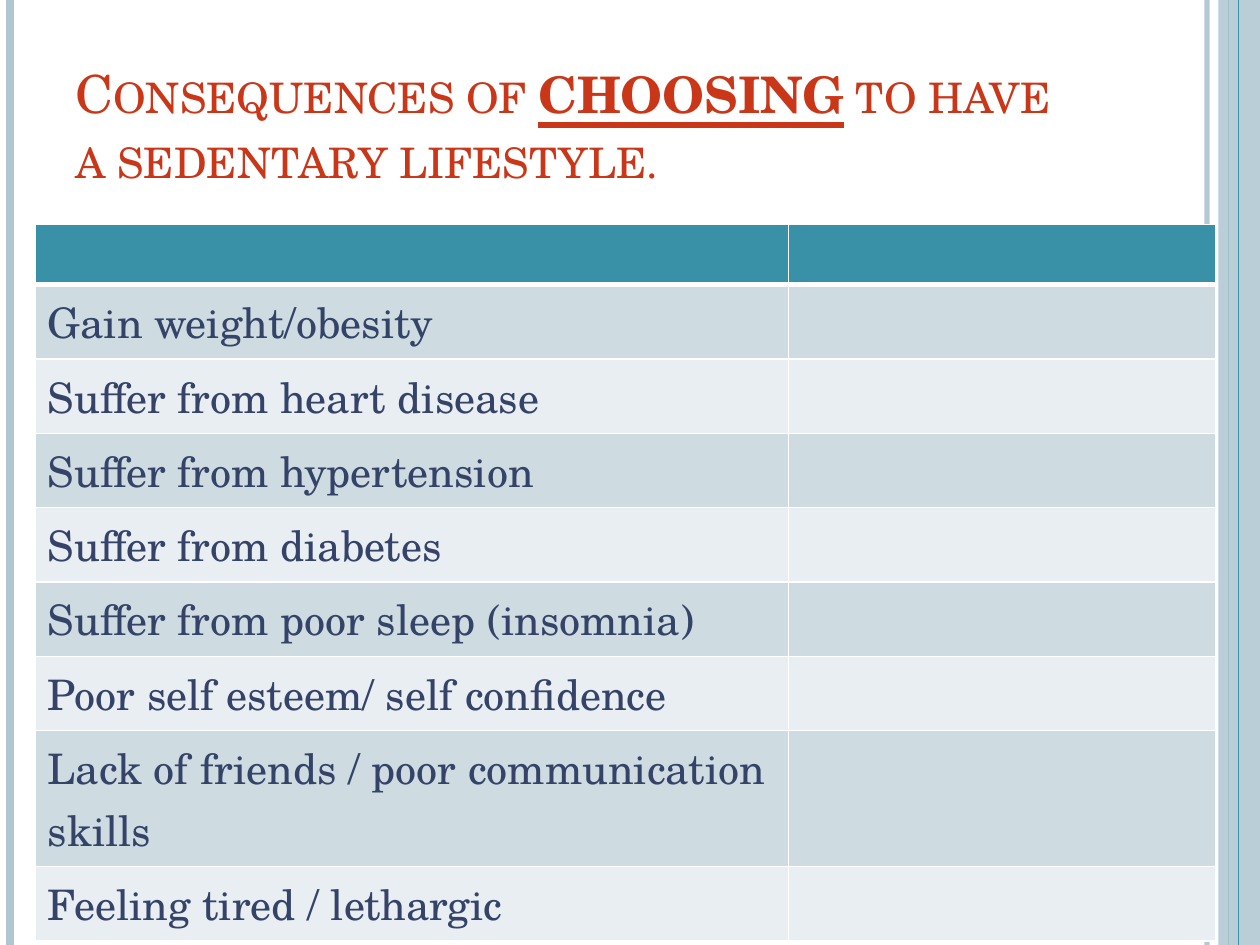
from lxml.etree import SubElement
from pptx import Presentation
from pptx.dml.color import RGBColor
from pptx.enum.shapes import MSO_CONNECTOR, MSO_SHAPE
from pptx.enum.text import MSO_ANCHOR
from pptx.oxml.ns import qn
from pptx.util import Inches, Pt

FONT = "TeX Gyre Schola"
TEAL, PALE_BLUE, WHITE = "3891A7", "AFC7D0", "FFFFFF"
TITLE_RED, TEXT_NAVY = "CA3618", "354369"
BANDS = ("CEDCE1", "E8EEF1")

CONSEQUENCES = [
    "Gain weight/obesity",
    "Suffer from heart disease",
    "Suffer from hypertension",
    "Suffer from diabetes",
    "Suffer from poor sleep (insomnia)",
    "Poor self esteem/ self confidence",
    "Lack of friends / poor communication skills",
    "Feeling tired / lethargic",
]
TWO_LINE_ROW = 7
HEADER_HEIGHT, ROW_HEIGHT, TWO_LINE_HEIGHT = 0.48, 0.59, 1.08
COLUMN_WIDTHS = (5.98, 3.39)


def color(hex_string):
    return RGBColor.from_string(hex_string)


def set_alpha(fill_parent, percent):
    rgb = fill_parent.find(".//" + qn("a:srgbClr"))
    SubElement(rgb, qn("a:alpha"), val=str(percent * 1000))


def add_rule(slide, x, hex_string, width, alpha=100):
    """Full-height vertical line."""
    rule = slide.shapes.add_connector(
        MSO_CONNECTOR.STRAIGHT, Inches(x), 0, Inches(x), Inches(7.5))
    rule.line.color.rgb = color(hex_string)
    rule.line.width = Pt(width)
    properties = rule._element.spPr
    if alpha < 100:
        set_alpha(properties, alpha)
    SubElement(properties, qn("a:effectLst"))


def add_side_band(slide):
    band = slide.shapes.add_shape(
        MSO_SHAPE.RECTANGLE, Inches(9.67), 0, Inches(0.33), Inches(7.5))
    band.shadow.inherit = False
    band.fill.solid()
    band.fill.fore_color.rgb = color(PALE_BLUE)
    set_alpha(band._element.spPr, 87)
    band.line.fill.background()


def add_title(slide):
    title = slide.shapes.add_textbox(
        Inches(0.5), Inches(0.3), Inches(8.17), Inches(1.25))
    frame = title.text_frame
    frame.word_wrap = True
    frame.vertical_anchor = MSO_ANCHOR.BOTTOM
    paragraph = frame.paragraphs[0]
    paragraph.font.name = FONT
    paragraph.font.color.rgb = color(TITLE_RED)
    for text, size, stressed in (
            ("Consequences of ", 30, False),
            ("choosing", 36, True),
            (" to have a sedentary lifestyle.", 30, False)):
        run = paragraph.add_run()
        run.text = text
        run.font.name = FONT
        run.font.color.rgb = color(TITLE_RED)
        run.font.size = Pt(size)
        run.font.bold = run.font.underline = stressed
        run._r.get_or_add_rPr().set("cap", "small")


def style_cell(cell, fill, bottom_width):
    """White borders first, then the fill, as the schema orders them."""
    properties = cell._tc.get_or_add_tcPr()
    for side, width in (("L", 1), ("R", 1), ("T", 1), ("B", bottom_width)):
        border = SubElement(properties, qn("a:ln" + side), w=str(Pt(width)))
        solid = SubElement(border, qn("a:solidFill"))
        SubElement(solid, qn("a:srgbClr"), val=WHITE)
    cell.fill.solid()
    cell.fill.fore_color.rgb = color(fill)


def add_consequences_table(slide):
    heights = [HEADER_HEIGHT] + [ROW_HEIGHT] * len(CONSEQUENCES)
    heights[TWO_LINE_ROW] = TWO_LINE_HEIGHT
    table = slide.shapes.add_table(
        len(heights), len(COLUMN_WIDTHS), Inches(0.28), Inches(1.78),
        Inches(sum(COLUMN_WIDTHS)), Inches(sum(heights))).table
    for column, width in zip(table.columns, COLUMN_WIDTHS):
        column.width = Inches(width)
    for index, (row, height) in enumerate(zip(table.rows, heights)):
        row.height = Inches(height)
        fill = BANDS[(index - 1) % 2] if index else TEAL
        for cell in row.cells:
            style_cell(cell, fill, 1 if index else 3)
    for index, text in enumerate(CONSEQUENCES, start=1):
        cell = table.cell(index, 0)
        cell.text = text
        font = cell.text_frame.paragraphs[0].font
        font.name = FONT
        font.size = Pt(24)
        font.color.rgb = color(TEXT_NAVY)


def main():
    deck = Presentation()
    deck.slide_width, deck.slide_height = Inches(10), Inches(7.5)
    slide = deck.slides.add_slide(deck.slide_layouts[6])

    # Side decoration
    add_rule(slide, 9.58, PALE_BLUE, 3, alpha=93)
    add_rule(slide, 0.08, PALE_BLUE, 4.5)
    add_rule(slide, 9.75, TEAL, 0.75)
    add_side_band(slide)
    add_rule(slide, 9.83, TEAL, 0.75)

    # Content
    add_title(slide)
    add_consequences_table(slide)
    deck.save("out.pptx")


if __name__ == "__main__":
    main()
